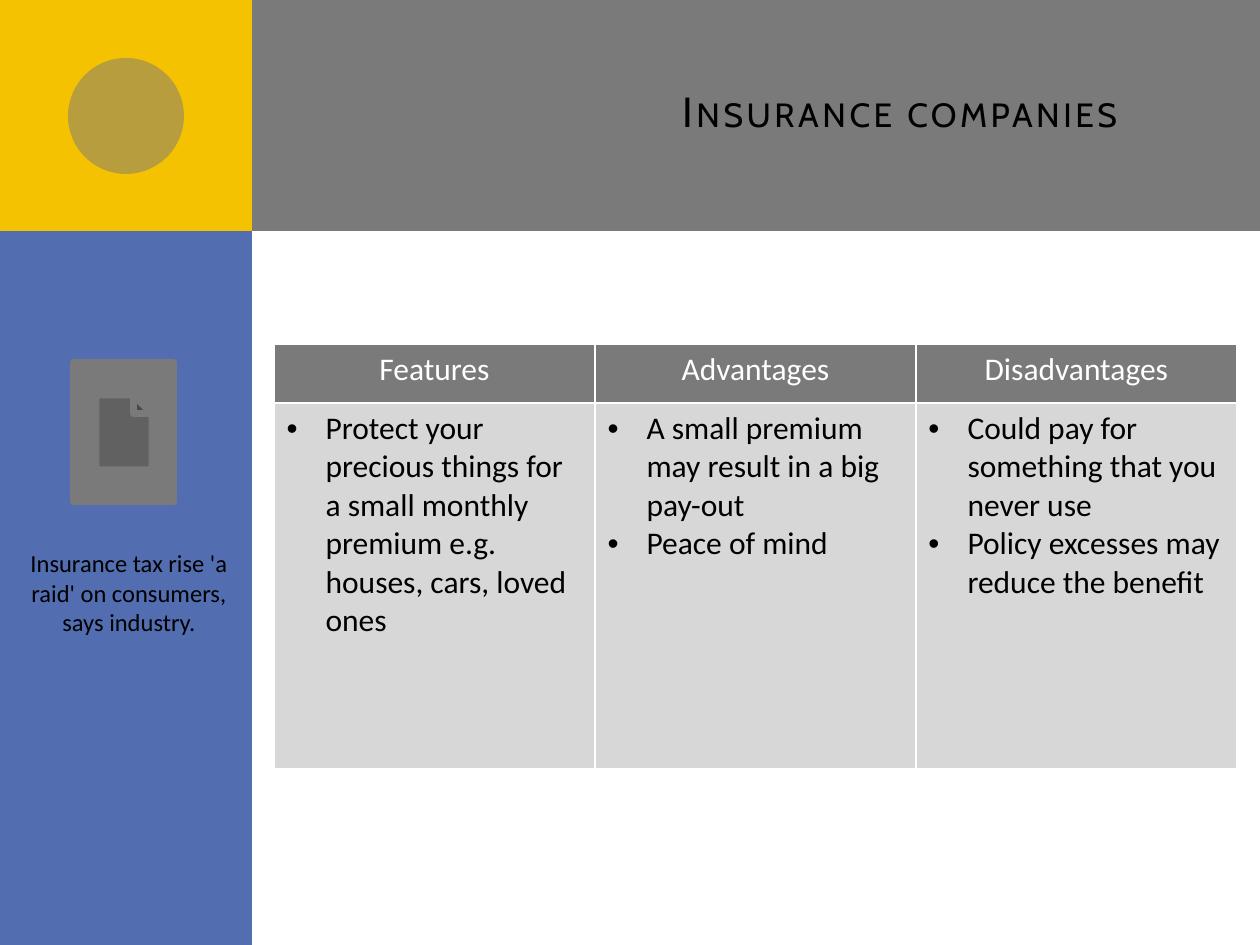
from dataclasses import dataclass

from lxml import etree
from pptx import Presentation
from pptx import util as u
from pptx.dml.color import RGBColor
from pptx.enum import shapes, text
from pptx.oxml.ns import qn

PX = u.Inches(1) / 126
GREY, BLUE, YELLOW, PALE = "7A7A7A", "526DB0", "F5C201", "D7D7D7"
BLACK, WHITE = "000000", "FFFFFF"
SHAPE, ALIGN = shapes.MSO_SHAPE, text.PP_ALIGN


@dataclass
class Block:
    kind: shapes.MSO_SHAPE
    box: tuple[int, int, int, int]
    color: str
    opacity: int = 100
    line_pt: int = 0


@dataclass
class Column:
    heading: str
    points: list[str]


BLOCKS = [
    Block(SHAPE.RECTANGLE, (63, 0, 1197, 231), GREY),
    Block(SHAPE.RECTANGLE, (0, 0, 252, 945), BLUE),
    Block(SHAPE.RECTANGLE, (0, 0, 252, 231), YELLOW),
    Block(SHAPE.OVAL, (68, 58, 116, 116), GREY, opacity=50),
    Block(SHAPE.ACTION_BUTTON_DOCUMENT, (74, 363, 100, 139), GREY, line_pt=4),
]
COLUMNS = [
    Column("Features", ["Protect your precious things for a small monthly premium "
                        "e.g. houses, cars, loved ones"]),
    Column("Advantages", ["A small premium may result in a big pay-out", "Peace of mind"]),
    Column("Disadvantages", ["Could pay for something that you never use",
                             "Policy excesses may reduce the benefit"]),
]


def px(n: int) -> int:
    return round(n * PX)


def rgb(color: str) -> RGBColor:
    return RGBColor.from_string(color)


def fill(target, color: str) -> None:
    target.fill.solid()
    target.fill.fore_color.rgb = rgb(color)


def write(p, words: str, size: int = 18, font: str = "Calibri", color: str = BLACK,
          align=ALIGN.LEFT):
    p.alignment = align
    r = p.add_run()
    r.text = words
    r.font.size, r.font.name, r.font.bold = u.Pt(size), font, False
    r.font.color.rgb = rgb(color)
    return r


def bullet(p) -> None:
    pPr = p._p.get_or_add_pPr()
    indent = u.Inches(0.31)
    pPr.set("marL", str(indent))
    pPr.set("indent", str(-indent))
    etree.SubElement(pPr, qn("a:buFont")).set("typeface", "Arial")
    etree.SubElement(pPr, qn("a:buChar")).set("char", "•")


def draw_block(s, block: Block) -> None:
    sp = s.shapes.add_shape(block.kind, *map(px, block.box))
    sp.shadow.inherit = False
    fill(sp, block.color)
    if block.opacity < 100:
        color = sp.fill._xPr.find(qn("a:solidFill"))[0]
        etree.SubElement(color, qn("a:alpha")).set("val", str(block.opacity * 1000))
    if block.line_pt:
        sp.line.color.rgb = rgb(block.color)
        sp.line.width = u.Pt(block.line_pt)
    else:
        sp.line.fill.background()


def draw_title(s, words: str) -> None:
    sp = s.shapes.title
    sp.left, sp.top, sp.width, sp.height = map(px, (336, 32, 861, 158))
    tf = sp.text_frame
    tf.vertical_anchor = text.MSO_ANCHOR.MIDDLE
    tf.auto_size = text.MSO_AUTO_SIZE.NONE
    r = write(tf.paragraphs[0], words, size=24, font="Cabin", align=ALIGN.RIGHT)
    rPr = r._r.get_or_add_rPr()
    rPr.set("cap", "small")
    rPr.set("spc", "200")


def draw_table(s, columns: list[Column]) -> None:
    """The default table style supplies the white borders."""
    width, heights = 321, (59, 366)
    frame = s.shapes.add_table(2, len(columns), px(274), px(344),
                               px(width * len(columns)), px(sum(heights)))
    table = frame.table
    table.horz_banding = False
    for row, height in zip(table.rows, heights):
        row.height = px(height)
    for i, column in enumerate(columns):
        table.columns[i].width = px(width)
        head, body = table.cell(0, i), table.cell(1, i)
        fill(head, GREY)
        fill(body, PALE)
        write(head.text_frame.paragraphs[0], column.heading, color=WHITE, align=ALIGN.CENTER)
        tf = body.text_frame
        for n, point in enumerate(column.points):
            p = tf.add_paragraph() if n else tf.paragraphs[0]
            write(p, point)
            bullet(p)


def draw_caption(s, words: str) -> None:
    tf = s.shapes.add_textbox(*map(px, (15, 542, 228, 140))).text_frame
    tf.word_wrap = True
    tf.auto_size = text.MSO_AUTO_SIZE.SHAPE_TO_FIT_TEXT
    write(tf.paragraphs[0], words, size=14, align=ALIGN.CENTER)


def main() -> None:
    prs = Presentation()
    prs.slide_width, prs.slide_height = u.Inches(10), u.Inches(7.5)
    s = prs.slides.add_slide(prs.slide_layouts[5])
    for block in BLOCKS:
        draw_block(s, block)
    # The title starts at the back, so lift it above the header band.
    s.shapes._spTree.append(s.shapes.title._element)
    draw_title(s, "Insurance companies")
    draw_table(s, COLUMNS)
    draw_caption(s, "Insurance tax rise 'a raid' on consumers, says industry.")
    prs.save("out.pptx")


if __name__ == "__main__":
    main()
